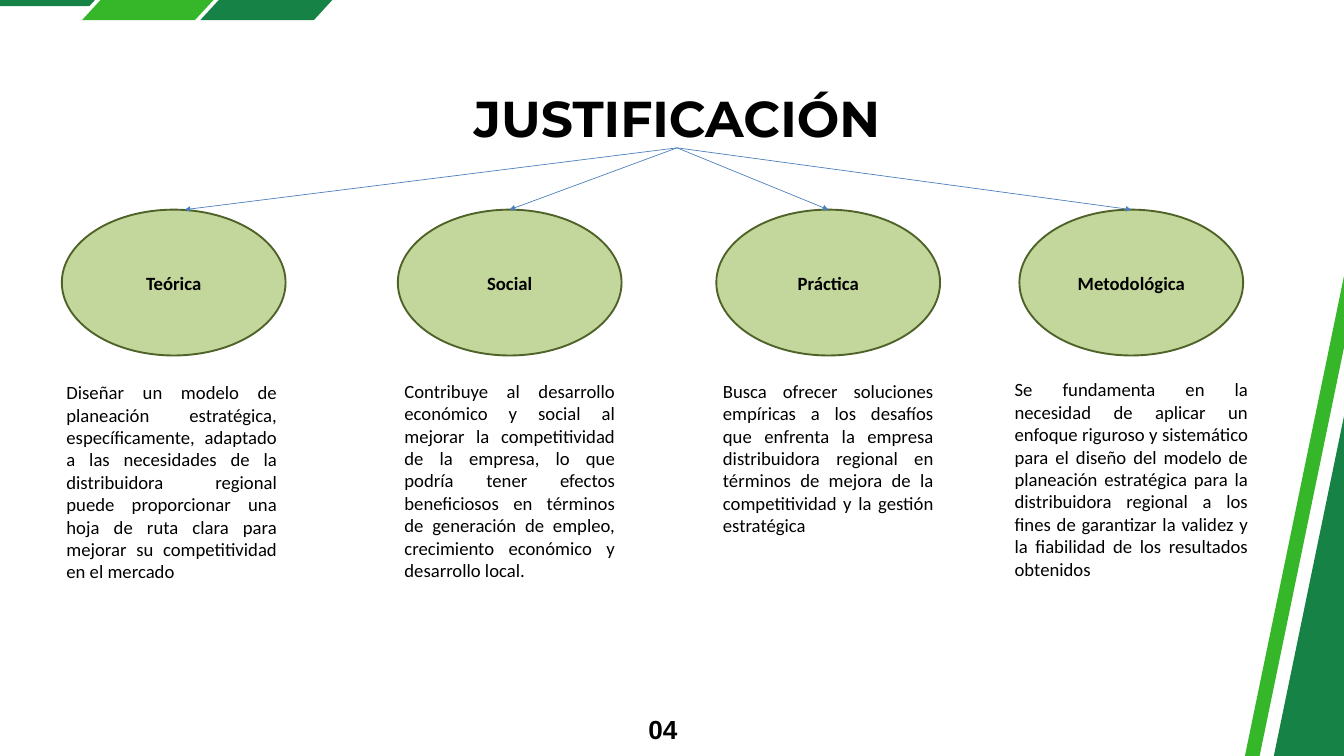
from lxml import etree
from pptx import Presentation
from pptx.dml.color import RGBColor
from pptx.enum.shapes import MSO_CONNECTOR, MSO_SHAPE
from pptx.enum.text import MSO_ANCHOR, MSO_AUTO_SIZE, PP_ALIGN
from pptx.oxml.ns import qn
from pptx.util import Inches, Pt

STRAIGHT = MSO_CONNECTOR.STRAIGHT
OVAL = MSO_SHAPE.OVAL
MIDDLE = MSO_ANCHOR.MIDDLE
GROW = MSO_AUTO_SIZE.SHAPE_TO_FIT_TEXT
CENTER, RIGHT, JUSTIFY = PP_ALIGN.CENTER, PP_ALIGN.RIGHT, PP_ALIGN.JUSTIFY

BLACK = RGBColor(0x00, 0x00, 0x00)
DARK_GREEN = RGBColor(0x16, 0x82, 0x46)
BRIGHT_GREEN = RGBColor(0x35, 0xB7, 0x29)
OVAL_FILL = RGBColor(0xC3, 0xD6, 0x9B)
OVAL_LINE = RGBColor(0x4F, 0x62, 0x28)
ARROW_BLUE = RGBColor(0x4B, 0x7E, 0xBC)

OVAL_TOP, OVAL_WIDTH, OVAL_HEIGHT = 3.12, 3.33, 2.17
ARROW_START = (10.08, 2.2)

# Green bands along the top and right edges
BANDS = [
    (DARK_GREEN, [(-1.79, -0.83), (2.17, -0.83), (1.33, 0.09), (-2.63, 0.09)]),
    (BRIGHT_GREEN, [(2.44, -1.03), (4.13, -1.03), (2.9, 0.3), (1.22, 0.3)]),
    (DARK_GREEN, [(4.2, -1.03), (5.89, -1.03), (4.67, 0.3), (2.98, 0.3)]),
    (DARK_GREEN, [(18.13, 15.25), (21.45, -0.83), (26.01, 0.12), (22.69, 16.19)]),
    (BRIGHT_GREEN, [(17.7, 15.25), (21.02, -0.83), (21.23, -0.78), (17.91, 15.29)]),
]

# Heading, oval left, arrow end, text box (left, top, width, height), text
JUSTIFICATIONS = [
    ("Teórica", 0.92, 2.75, (0.89, 5.62, 3.33, 3.13),
     "Diseñar un modelo de planeación estratégica, específicamente, adaptado a las "
     "necesidades de la distribuidora regional puede proporcionar una hoja de ruta clara "
     "para mejorar su competitividad en el mercado"),
    ("Social", 5.92, 7.58, (5.92, 5.6, 3.33, 3.13),
     "Contribuye al desarrollo económico y social al mejorar la competitividad de la "
     "empresa, lo que podría tener efectos beneficiosos en términos de generación de "
     "empleo, crecimiento económico y desarrollo local."),
    ("Práctica", 10.66, 12.33, (10.66, 5.6, 3.33, 2.46),
     "Busca ofrecer soluciones empíricas a los desafíos que enfrenta la empresa "
     "distribuidora regional en términos de mejora de la competitividad y la gestión "
     "estratégica"),
    ("Metodológica", 15.17, 16.83, (15, 5.58, 3.67, 3.13),
     "Se fundamenta en la necesidad de aplicar un enfoque riguroso y sistemático para "
     "el diseño del modelo de planeación estratégica para la distribuidora regional a los "
     "fines de garantizar la validez y la fiabilidad de los resultados obtenidos"),
]


def add_band(slide, color, points):
    corners = [(Inches(x), Inches(y)) for x, y in points]
    builder = slide.shapes.build_freeform(*corners[0], scale=1.0)
    builder.add_line_segments(corners[1:], close=True)
    band = builder.convert_to_shape()
    band.shadow.inherit = False
    band.fill.solid()
    band.fill.fore_color.rgb = color
    band.line.fill.background()


def write_text(shape, text, size, font_name="Calibri", bold=False, alignment=CENTER):
    shape.text_frame.text = text
    paragraph = shape.text_frame.paragraphs[0]
    paragraph.alignment = alignment
    font = paragraph.runs[0].font
    font.name = font_name
    font.size = Pt(size)
    font.bold = bold
    font.color.rgb = BLACK
    return paragraph


def add_text_box(slide, box, inset=True):
    text_box = slide.shapes.add_textbox(*(Inches(value) for value in box))
    frame = text_box.text_frame
    frame.word_wrap = True
    frame.auto_size = GROW
    if not inset:
        frame.margin_left = frame.margin_right = 0
        frame.margin_top = frame.margin_bottom = 0
    return text_box


def add_oval(slide, left, heading):
    oval = slide.shapes.add_shape(
        OVAL, Inches(left), Inches(OVAL_TOP), Inches(OVAL_WIDTH), Inches(OVAL_HEIGHT))
    oval.shadow.inherit = False
    oval.fill.solid()
    oval.fill.fore_color.rgb = OVAL_FILL
    oval.line.color.rgb = OVAL_LINE
    oval.line.width = Pt(2)
    oval.text_frame.vertical_anchor = MIDDLE
    write_text(oval, heading, 20, bold=True)
    return oval


def add_arrow(slide, title, oval, end_x):
    start_x, start_y = ARROW_START
    arrow = slide.shapes.add_connector(
        STRAIGHT, Inches(start_x), Inches(start_y), Inches(end_x), Inches(OVAL_TOP))
    arrow.begin_connect(title, 2)
    # Join only the arrows that meet the middle of the oval's top
    if abs(oval.left + oval.width // 2 - Inches(end_x)) < Inches(0.05):
        arrow.end_connect(oval, 0)
    arrow.line.color.rgb = ARROW_BLUE
    arrow.line.width = Pt(0.75)
    etree.SubElement(arrow.line._get_or_add_ln(), qn("a:tailEnd"), type="triangle")
    etree.SubElement(arrow._element.spPr, qn("a:effectLst"))


def main():
    presentation = Presentation()
    presentation.slide_width = Inches(20)
    presentation.slide_height = Inches(11.25)
    slide = presentation.slides.add_slide(presentation.slide_layouts[6])

    for color, points in BANDS:
        add_band(slide, color, points)

    # Title and page number
    title = add_text_box(slide, (6.31, 1.29, 7.53, 0.91), inset=False)
    write_text(title, "JUSTIFICACIÓN", 54, "Montserrat", bold=True)
    number = add_text_box(slide, (9.52, 10.54, 0.56, 0.5), inset=False)
    paragraph = write_text(number, "04", 28, "Arial", bold=True, alignment=RIGHT)
    paragraph.line_spacing = Pt(39.2)

    # Four justifications, each with an oval, a text and an arrow
    for heading, left, arrow_end, box, text in JUSTIFICATIONS:
        oval = add_oval(slide, left, heading)
        write_text(add_text_box(slide, box), text, 20, alignment=JUSTIFY)
        add_arrow(slide, title, oval, arrow_end)

    presentation.save("out.pptx")


if __name__ == "__main__":
    main()
